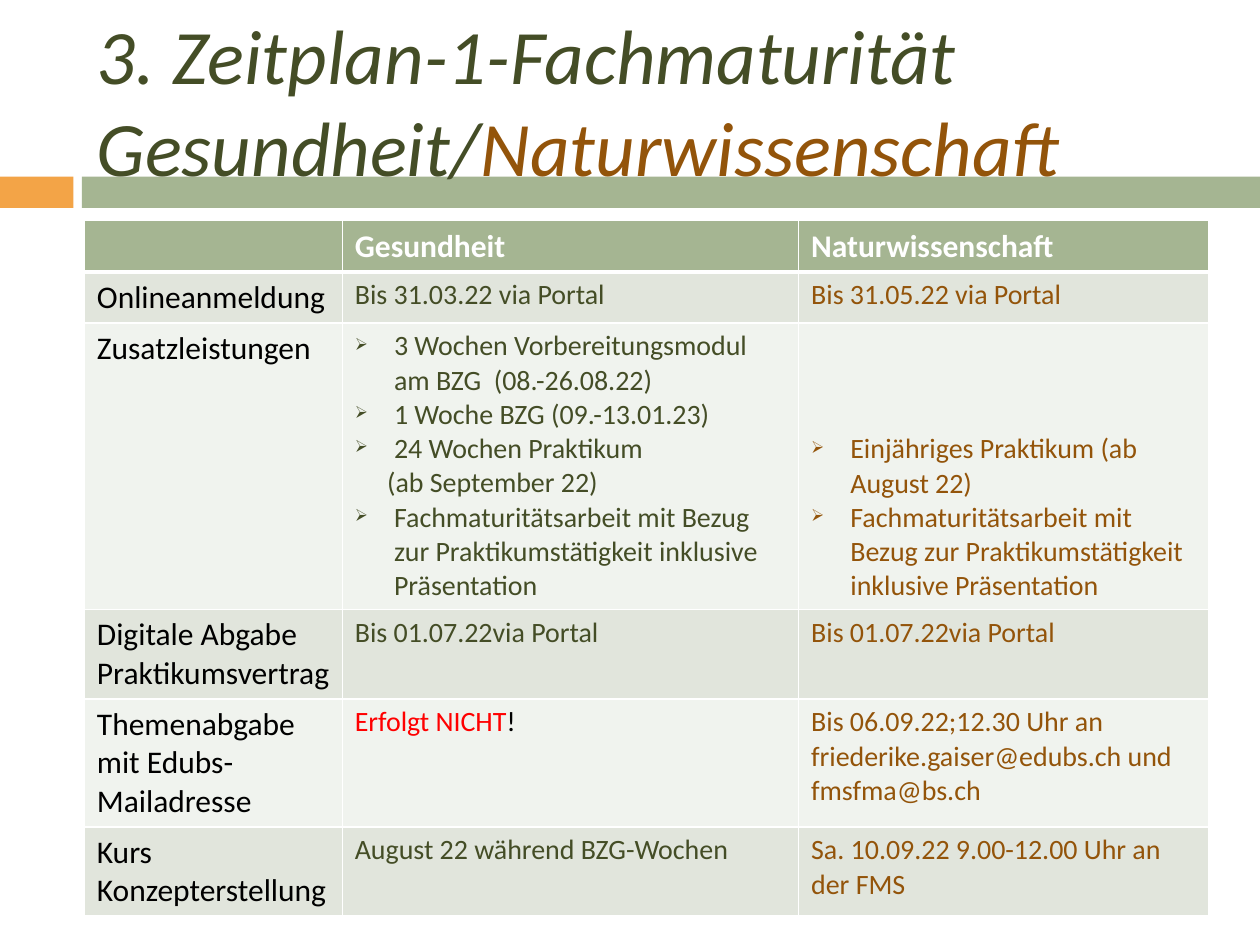
from dataclasses import dataclass

from lxml.etree import SubElement
from pptx import Presentation
from pptx.dml.color import RGBColor as Rgb
from pptx.enum.shapes import MSO_SHAPE as Geo
from pptx.enum.text import MSO_ANCHOR as Anchor
from pptx.oxml import parse_xml
from pptx.oxml.ns import nsdecls, qn
from pptx.util import Cm, Pt


@dataclass(frozen=True)
class Theme:
    font: str = "Calibri"
    title: int = 44
    label: int = 18
    body: int = 16
    green: str = "444D26"
    brown: str = "93540A"
    red: str = "FF0000"
    black: str = "000000"
    white: str = "FFFFFF"
    sage: str = "A5B592"
    orange: str = "F3A447"
    bands: tuple = ("E1E5DC", "F0F3EE")


@dataclass(frozen=True)
class Item:
    """A paragraph with a left indent in cm and, if wanted, an arrow bullet."""
    text: str
    left: float = 0.79
    bullet: bool = True


class Deck:
    def __init__(self, theme):
        self.theme = theme
        self.prs = Presentation()
        self.prs.slide_width, self.prs.slide_height = Cm(25.4), Cm(19.05)
        self.slide = self.prs.slides.add_slide(self.prs.slide_layouts[6])

    def bar(self, x, y, w, h, color):
        box = self.slide.shapes.add_shape(Geo.RECTANGLE, Cm(x), Cm(y), Cm(w), Cm(h))
        box.shadow.inherit = False
        box.fill.solid()
        box.fill.fore_color.rgb = Rgb.from_string(color)
        box.line.fill.background()

    def style(self, par, size, color=None, bold=None, italic=None):
        font = par.font
        font.name, font.size = self.theme.font, Pt(size)
        font.bold, font.italic = bold, italic
        if color:
            font.color.rgb = Rgb.from_string(color)

    def runs(self, par, parts):
        """Add runs from pairs of text and colour."""
        for text, color in parts:
            run = par.add_run()
            run.text = text
            run.font.color.rgb = Rgb.from_string(color)

    def title(self, x, y, w, h, parts):
        frame = self.slide.shapes.add_textbox(Cm(x), Cm(y), Cm(w), Cm(h)).text_frame
        frame.word_wrap = True
        frame.vertical_anchor = Anchor.MIDDLE
        par = frame.paragraphs[0]
        self.style(par, self.theme.title, italic=True)
        self.runs(par, parts)

    def indent(self, par, item):
        props = par._p.get_or_add_pPr()
        props.set("marL", str(Cm(item.left)))
        if item.bullet:
            props.set("indent", str(-Cm(item.left)))
            size = parse_xml(f'<a:buSzPct {nsdecls("a")} val="60000"/>')
            mark = parse_xml(f'<a:buChar {nsdecls("a")} char="➢"/>')
            props.insert(0, size)
            props.insert(1, mark)

    def border(self, cell, head):
        props = cell._tc.get_or_add_tcPr()
        for i, side in enumerate("LRTB"):
            width = Pt(3 if head and side == "B" else 1)
            line = parse_xml(f'<a:ln{side} {nsdecls("a")} w="{width}"/>')
            fill = SubElement(line, qn("a:solidFill"))
            SubElement(fill, qn("a:srgbClr"), val=self.theme.white)
            props.insert(i, line)

    def cell(self, cell, content, size, color, fill, head):
        """Fill a cell from a string, a list of items or a tuple of coloured runs."""
        cell.fill.solid()
        cell.fill.fore_color.rgb = Rgb.from_string(fill)
        self.border(cell, head)
        frame = cell.text_frame
        lines = content if isinstance(content, list) else [content]
        for i, line in enumerate(lines):
            par = frame.add_paragraph() if i else frame.paragraphs[0]
            mixed = isinstance(line, tuple)
            self.style(par, size, None if mixed else color, bold=head)
            if mixed:
                self.runs(par, line)
            elif isinstance(line, Item):
                par.text = line.text
                self.indent(par, line)
            else:
                par.text = line

    def table(self, x, y, cols, highs, rows):
        t = self.theme
        grid = self.slide.shapes.add_table(
            len(rows), len(cols), Cm(x), Cm(y), Cm(sum(cols)), Cm(sum(highs))).table
        for col, width in zip(grid.columns, cols):
            col.width = Cm(width)
        for row, high in zip(grid.rows, highs):
            row.height = Cm(high)
        looks = [(t.label, t.black), (t.body, t.green), (t.body, t.brown)]
        for r, row in enumerate(rows):
            head = r == 0
            fill = t.sage if head else t.bands[(r - 1) % 2]
            for c, content in enumerate(row):
                size, color = (t.label, t.white) if head else looks[c]
                self.cell(grid.cell(r, c), content, size, color, fill, head)
        return grid


def main():
    theme = Theme()
    deck = Deck(theme)
    deck.bar(0, 3.56, 1.48, 0.63, theme.orange)
    deck.bar(1.65, 3.56, 23.75, 0.63, theme.sage)
    deck.title(1.7, 0.64, 22.66, 2.74, [
        ("3. Zeitplan-1-Fachmaturität Gesundheit/", theme.green),
        ("Naturwissenschaft", theme.brown)])

    thesis = Item("Fachmaturitätsarbeit mit Bezug zur Praktikumstätigkeit "
                  "inklusive Präsentation")
    health = [
        Item("3 Wochen Vorbereitungsmodul am BZG \u00a0(08.-26.08.22)"),
        Item("1 Woche BZG (09.-13.01.23)"),
        Item("24 Wochen Praktikum"),
        Item("(ab September 22)", 0.65, False),
        thesis]
    science = [Item("Einjähriges Praktikum (ab August 22)"), thesis]
    contract = "Bis 01.07.22via Portal"
    rows = [
        ("", "Gesundheit", "Naturwissenschaft"),
        ("Onlineanmeldung", "Bis 31.03.22 via Portal", "Bis 31.05.22 via Portal"),
        ("Zusatzleistungen", health, science),
        ("Digitale Abgabe Praktikumsvertrag", contract, contract),
        ("Themenabgabe mit Edubs-Mailadresse",
         (("Erfolgt NICHT", theme.red), ("!", theme.black)),
         "Bis 06.09.22;12.30 Uhr an friederike.gaiser@edubs.ch und fmsfma@bs.ch"),
        ("Kurs Konzepterstellung", "August 22 während BZG-Wochen",
         "Sa. 10.09.22 9.00-12.00 Uhr an der FMS"),
    ]
    grid = deck.table(1.7, 4.45, [5.2, 9.2, 8.26],
                      [1.03, 1.03, 5.78, 1.8, 2.58, 1.8], rows)
    grid.cell(2, 2).vertical_anchor = Anchor.BOTTOM
    deck.prs.save("out.pptx")


if __name__ == "__main__":
    main()
